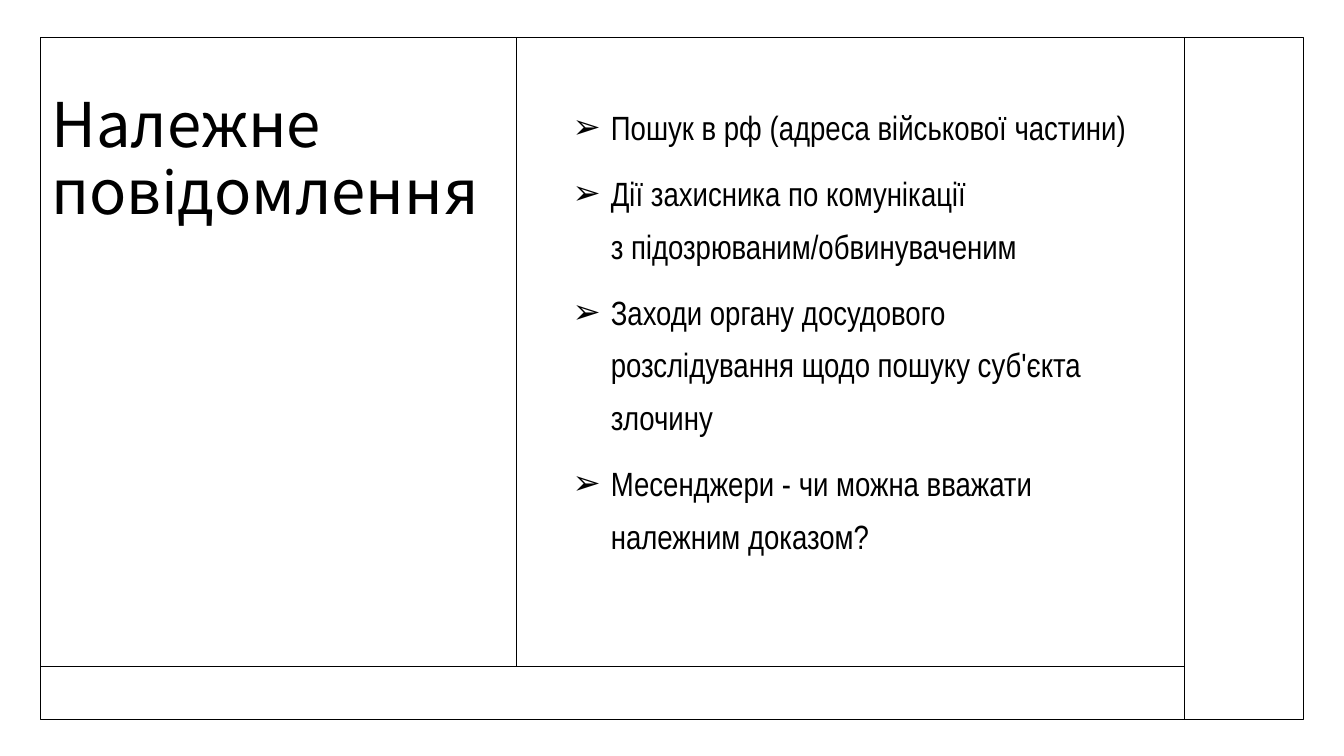
from dataclasses import dataclass

from lxml.etree import SubElement
from pptx import Presentation
from pptx.dml.color import RGBColor
from pptx.enum.shapes import MSO_CONNECTOR, MSO_SHAPE
from pptx.enum.text import MSO_ANCHOR, PP_ALIGN
from pptx.oxml.ns import qn
from pptx.util import Inches, Pt


@dataclass(frozen=True)
class Theme:
    ink: RGBColor = RGBColor(0x00, 0x00, 0x00)
    rule_width: float = 1
    title_font: str = "Noto Sans CJK KR"
    title_size: float = 44
    body_font: str = "Arial Narrow"
    body_size: float = 24
    bullet: str = "➢"
    bullet_font: str = "Arial"
    bullet_indent: float = 0.38


THEME = Theme()

# Non-breaking space keeps short words with their neighbours
NBSP = chr(160)

TITLE = "Належне повідомлення"
NOTICE_POINTS = (
    f"Пошук в рф{NBSP}(адреса військової частини)",
    f"Дії захисника по комунікації з{NBSP}підозрюваним/обвинуваченим",
    "Заходи органу досудового розслідування щодо пошуку суб'єкта злочину",
    "Месенджери - чи можна вважати належним доказом?",
)

# Frame and dividers, in inches
LEFT, TOP, RIGHT, BOTTOM = 0.4, 0.37, 12.93, 7.14
TITLE_EDGE, BODY_EDGE, FOOTER_EDGE = 5.12, 11.75, 6.61
TEXT_TOP, TEXT_HEIGHT = 0.89, 5.22


def style_line(line):
    line.color.rgb = THEME.ink
    line.width = Pt(THEME.rule_width)


def add_frame(slide):
    frame = slide.shapes.add_shape(
        MSO_SHAPE.RECTANGLE, Inches(LEFT), Inches(TOP),
        Inches(RIGHT - LEFT), Inches(BOTTOM - TOP))
    frame.shadow.inherit = False
    frame.fill.background()
    style_line(frame.line)


def add_divider(slide, x1, y1, x2, y2):
    divider = slide.shapes.add_connector(
        MSO_CONNECTOR.STRAIGHT, Inches(x1), Inches(y1), Inches(x2), Inches(y2))
    style_line(divider.line)
    SubElement(divider._element.spPr, qn("a:effectLst"))


def add_text_area(slide, left, width):
    area = slide.shapes.add_textbox(
        Inches(left), Inches(TEXT_TOP), Inches(width), Inches(TEXT_HEIGHT))
    text = area.text_frame
    text.word_wrap = True
    text.vertical_anchor = MSO_ANCHOR.TOP
    return text


def write(paragraph, words, font, size, line_spacing):
    paragraph.alignment = PP_ALIGN.LEFT
    paragraph.line_spacing = line_spacing
    run = paragraph.add_run()
    run.text = words
    run.font.name = font
    run.font.size = Pt(size)
    run.font.color.rgb = THEME.ink


def add_bullet(paragraph):
    properties = paragraph._p.get_or_add_pPr()
    indent = Inches(THEME.bullet_indent)
    properties.set("marL", str(indent))
    properties.set("indent", str(-indent))
    SubElement(properties, qn("a:buFont"), typeface=THEME.bullet_font)
    SubElement(properties, qn("a:buChar"), char=THEME.bullet)


def add_title(slide):
    text = add_text_area(slide, 0.41, 4.72)
    write(text.paragraphs[0], TITLE, THEME.title_font, THEME.title_size, 0.9)


def add_notice_points(slide):
    text = add_text_area(slide, 5.58, 5.71)
    for number, point in enumerate(NOTICE_POINTS):
        paragraph = text.add_paragraph() if number else text.paragraphs[0]
        write(paragraph, point, THEME.body_font, THEME.body_size, 1.3)
        paragraph.space_before = Pt(10)
        add_bullet(paragraph)


def main():
    presentation = Presentation()
    presentation.slide_width = Inches(13.33)
    presentation.slide_height = Inches(7.5)
    slide = presentation.slides.add_slide(presentation.slide_layouts[6])

    # Ruled grid
    add_frame(slide)
    add_divider(slide, LEFT, FOOTER_EDGE, BODY_EDGE, FOOTER_EDGE)
    add_divider(slide, TITLE_EDGE, TOP, TITLE_EDGE, FOOTER_EDGE)
    add_divider(slide, BODY_EDGE, TOP, BODY_EDGE, BOTTOM)

    # Text
    add_title(slide)
    add_notice_points(slide)

    presentation.save("out.pptx")


if __name__ == "__main__":
    main()
